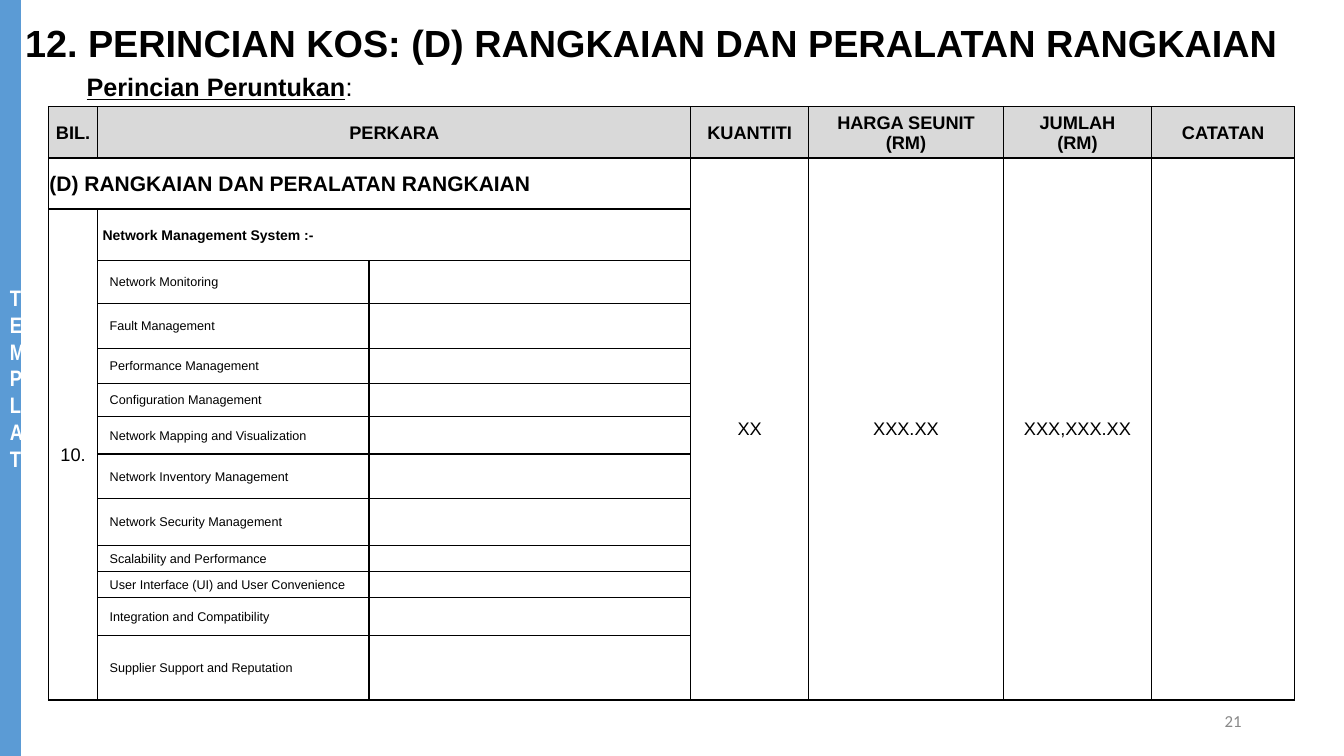
"""Build the cost breakdown slide for network and network equipment."""
from dataclasses import dataclass

from lxml import etree
from pptx import Presentation
from pptx import util as u
from pptx.dml.color import RGBColor
from pptx.enum import shapes, text
from pptx.oxml import ns

LEFT, CENTER, RIGHT, JUSTIFY = (
    text.PP_ALIGN.LEFT, text.PP_ALIGN.CENTER, text.PP_ALIGN.RIGHT, text.PP_ALIGN.JUSTIFY)
TOP, MIDDLE = text.MSO_ANCHOR.TOP, text.MSO_ANCHOR.MIDDLE
BOX_MARGINS = (7.2, 3.6, 7.2, 3.6)


@dataclass(frozen=True)
class Theme:
    """Colours, typefaces and type sizes of the slide."""
    ink: str = "000000"
    paper: str = "FFFFFF"
    bar: str = "5B9BD5"
    header: str = "D9D9D9"
    muted: str = "888888"
    body_font: str = "Arial"
    bar_font: str = "Arial Narrow"
    number_font: str = "Calibri"
    title: float = 27
    subtitle: float = 18
    bar_label: float = 16
    section: float = 15
    cell: float = 13
    page_number: float = 12
    group: float = 10
    item: float = 9
    border: float = 1


class SlideBuilder:
    """Draws styled elements on the current page."""

    def __init__(self, page, theme):
        """Keep the page and its theme."""
        self.page, self.theme = page, theme

    def add_lines(self, frame, lines, align=LEFT, **style):
        """Put lines of (wording, overrides) spans into a text frame."""
        base = {"name": self.theme.body_font, "size": self.theme.cell,
                "color": self.theme.ink, "bold": False, **style}
        for index, line in enumerate(lines):
            para = frame.add_paragraph() if index else frame.paragraphs[0]
            para.alignment = align
            for wording, overrides in line:
                span = para.add_run()
                span.text = wording
                values = {**base, **overrides}
                span.font.color.rgb = RGBColor.from_string(values.pop("color"))
                values["size"] = u.Pt(values["size"])
                for key, value in values.items():
                    setattr(span.font, key, value)

    def set_margins(self, holder, margins):
        """Set left, top, right and bottom margins."""
        for side, value in zip(("left", "top", "right", "bottom"), margins):
            setattr(holder, f"margin_{side}", u.Pt(value))

    def prepare(self, frame, anchor):
        """Wrap, anchor and inset a text frame."""
        frame.word_wrap, frame.vertical_anchor = True, anchor
        self.set_margins(frame, BOX_MARGINS)

    def label(self, area, spans, align=LEFT, anchor=TOP, **style):
        """Add a one-line text box."""
        box = self.page.shapes.add_textbox(*map(u.Pt, area))
        self.prepare(box.text_frame, anchor)
        self.add_lines(box.text_frame, [spans], align, **style)

    def side_bar(self, area, wording, **style):
        """Add a filled bar with a centred label."""
        bar = self.page.shapes.add_shape(shapes.MSO_SHAPE.RECTANGLE, *map(u.Pt, area))
        bar.shadow.inherit = False
        bar.fill.solid()
        bar.fill.fore_color.rgb = RGBColor.from_string(self.theme.bar)
        bar.line.fill.background()
        self.prepare(bar.text_frame, MIDDLE)
        self.add_lines(bar.text_frame, [[(wording, {})]], CENTER, **style)

    def grid(self, left, top, widths, heights):
        """Add a bordered table with plain cells."""
        table = self.page.shapes.add_table(
            len(heights), len(widths), *map(u.Pt, (left, top, sum(widths), sum(heights)))).table
        table.first_row = table.horz_banding = False
        for column, width in zip(table.columns, widths):
            column.width = u.Pt(width)
        for row, height in zip(table.rows, heights):
            row.height = u.Pt(height)
        for cell in table.iter_cells():
            self.outline(cell)
            cell.fill.background()
            cell.vertical_anchor = MIDDLE
            self.set_margins(cell, (0.7, 0.7, 0.7, 0))
            cell.text_frame.paragraphs[0].font.size = u.Pt(self.theme.item)
        return table

    def outline(self, cell):
        """Give a cell its four borders."""
        properties = cell._tc.get_or_add_tcPr()
        for side in "LRTB":
            line = etree.SubElement(properties, ns.qn(f"a:ln{side}"),
                                    w=str(u.Pt(self.theme.border)))
            fill = etree.SubElement(line, ns.qn("a:solidFill"))
            etree.SubElement(fill, ns.qn("a:srgbClr"), val=self.theme.ink)

    def fill_cell(self, cell, wording="", align=LEFT, fill=None, indent=0.7, **style):
        """Put wording and an optional fill into a cell."""
        if fill:
            cell.fill.solid()
            cell.fill.fore_color.rgb = RGBColor.from_string(fill)
        cell.margin_left = u.Pt(indent)
        if wording:
            self.add_lines(cell.text_frame, [[(line, {})] for line in wording.split("\n")],
                           align, **style)


HEADINGS = {0: "BIL.", 1: "PERKARA", 3: "KUANTITI", 4: "HARGA SEUNIT\n(RM)",
            5: "JUMLAH\n(RM)", 6: "CATATAN"}
AMOUNTS = {3: "XX", 4: "XXX.XX", 5: "XXX,XXX.XX", 6: ""}
ITEMS = ["Network Monitoring", "Fault Management", "Performance Management",
         "Configuration Management", "Network Mapping and Visualization",
         "Network Inventory Management", "Network Security Management",
         "Scalability and Performance", "User Interface (UI) and User Convenience",
         "Integration and Compatibility", "Supplier Support and Reputation"]
WIDTHS = [35.2, 193.8, 229.8, 84.2, 139.2, 105.8, 102.2]
HEIGHTS = [36.5, 36.5, 36.9, 30.6, 32.2, 24.8, 24, 26.6, 31.8, 33.5, 18.7, 18.7, 26.8, 46.4]


def cost_table(builder):
    """Draw the cost table."""
    theme = builder.theme
    table = builder.grid(34.6, 76.3, WIDTHS, HEIGHTS)
    last = len(HEIGHTS) - 1
    merges = [((0, 1), (0, 2)), ((1, 0), (1, 2)), ((2, 0), (last, 0)), ((2, 1), (2, 2))]
    merges += [((1, column), (last, column)) for column in AMOUNTS]
    for start, end in merges:
        table.cell(*start).merge(table.cell(*end))
    for column, heading in HEADINGS.items():
        builder.fill_cell(table.cell(0, column), heading, CENTER, theme.header, bold=True)
    builder.fill_cell(table.cell(1, 0), "(D) RANGKAIAN DAN PERALATAN RANGKAIAN",
                      fill=theme.paper, size=theme.section, bold=True)
    for column, amount in AMOUNTS.items():
        builder.fill_cell(table.cell(1, column), amount, CENTER, theme.paper)
    builder.fill_cell(table.cell(2, 0), "10.", CENTER, theme.paper)
    builder.fill_cell(table.cell(2, 1), "Network Management System :-", indent=3.5,
                      size=theme.group, bold=True)
    for row, item in enumerate(ITEMS, start=3):
        builder.fill_cell(table.cell(row, 1), item, indent=8.6, size=theme.item)


def main():
    """Build and save the deck."""
    deck = Presentation()
    deck.slide_width, deck.slide_height = u.Pt(960), u.Pt(540)
    theme = Theme()
    builder = SlideBuilder(deck.slides.add_slide(deck.slide_layouts[6]), theme)
    builder.side_bar((0, 0, 15, 540), "TEMPLAT", name=theme.bar_font,
                     size=theme.bar_label, color=theme.paper, bold=True)
    builder.label((678, 500.5, 216, 28.8), [("21", {})], RIGHT, MIDDLE,
                  name=theme.number_font, size=theme.page_number, color=theme.muted)
    builder.label((10.8, 10.8, 970.6, 57.6),
                  [("12. PERINCIAN KOS: (D) RANGKAIAN DAN PERALATAN RANGKAIAN", {})],
                  size=theme.title, bold=True)
    builder.label((54.7, 47.5, 601.2, 28.8),
                  [("Perincian Peruntukan", {"bold": True, "underline": True}), (":", {})],
                  JUSTIFY, size=theme.subtitle)
    cost_table(builder)
    deck.save("out.pptx")


if __name__ == "__main__":
    main()
